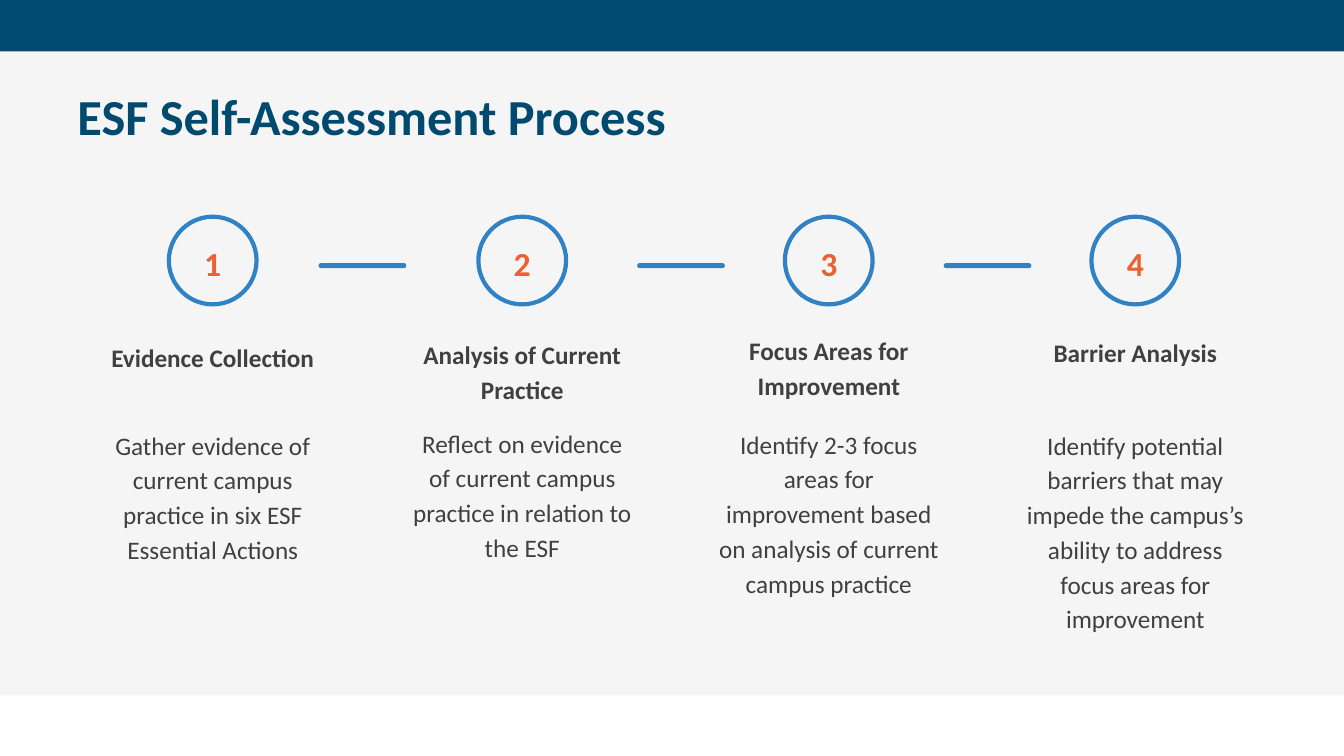
import pptx
import pptx.util
import pptx.dml.color
import pptx.enum.shapes
import pptx.enum.text
from dataclasses import dataclass
from pptx.util import Inches

SHAPES = pptx.enum.shapes.MSO_SHAPE
ANCHOR = pptx.enum.text.MSO_ANCHOR
ALIGN = pptx.enum.text.PP_ALIGN


@dataclass(frozen=True)
class Theme:
    font: str = "Calibri"
    navy: str = "00496F"
    blue: str = "3082C5"
    orange: str = "EC6133"
    ink: str = "404040"
    panel: str = "F5F5F5"
    title_size: int = 36
    number_size: int = 24
    text_size: int = 18


THEME = Theme()
SLIDE_WIDTH = 13.33
CIRCLE_SIZE = 0.87
NUMBER_WIDTH = 0.64
COLUMN_WIDTH = 2.49

# Column centre, heading top, body top, heading, body
STEPS = [
    (2.11, 3.18, 4.09, "Evidence Collection",
     "Gather evidence of current campus practice in six ESF Essential Actions"),
    (5.18, 3.49, 4.07, "Analysis of Current Practice",
     "Reflect on evidence of current campus practice in relation to the ESF"),
    (8.22, 3.45, 4.08, "Focus Areas for Improvement",
     "Identify 2-3 focus areas for improvement based on analysis of current campus practice"),
    (11.26, 3.13, 4.09, "Barrier Analysis",
     "Identify potential barriers that may impede the campus’s ability to address "
     "focus areas for improvement"),
]
DASH_LEFTS = [3.16, 6.32, 9.36]


def rgb(color):
    return pptx.dml.color.RGBColor.from_string(color)


def add_filled(page, kind, left, top, width, height, color):
    shape = page.shapes.add_shape(
        kind, Inches(left), Inches(top), Inches(width), Inches(height))
    shape.shadow.inherit = False
    shape.fill.solid()
    shape.fill.fore_color.rgb = rgb(color)
    shape.line.fill.background()
    return shape


def add_circle(page, center, top):
    circle = page.shapes.add_shape(
        SHAPES.OVAL, Inches(center - CIRCLE_SIZE / 2), Inches(top),
        Inches(CIRCLE_SIZE), Inches(CIRCLE_SIZE))
    circle.shadow.inherit = False
    circle.fill.background()
    circle.line.color.rgb = rgb(THEME.blue)
    circle.line.width = pptx.util.Pt(3)


def add_text(page, left, top, width, height, text, size, color, bold=False,
             anchor=ANCHOR.TOP, align=ALIGN.CENTER, inset=0.13, spacing=1.15):
    box = page.shapes.add_textbox(
        Inches(left), Inches(top), Inches(width), Inches(height))
    frame = box.text_frame
    frame.word_wrap = True
    frame.vertical_anchor = anchor
    frame.margin_left = frame.margin_right = Inches(inset)
    frame.margin_top = frame.margin_bottom = Inches(inset)
    para = frame.paragraphs[0]
    para.alignment = align
    para.line_spacing = spacing
    span = para.add_run()
    span.text = text
    span.font.name = THEME.font
    span.font.size = pptx.util.Pt(size)
    span.font.bold = bold
    span.font.color.rgb = rgb(color)


def add_step(page, number, center, heading_top, body_top, heading, body):
    left = center - COLUMN_WIDTH / 2
    add_circle(page, center, 2.15)
    add_text(page, center - NUMBER_WIDTH / 2, 2.35, NUMBER_WIDTH, 0.47,
             str(number), THEME.number_size, THEME.orange, bold=True, inset=0)
    add_text(page, left, heading_top, COLUMN_WIDTH, 0.65, heading,
             THEME.text_size, THEME.ink, bold=True, anchor=ANCHOR.BOTTOM)
    add_text(page, left, body_top, COLUMN_WIDTH, 1.08, body,
             THEME.text_size, THEME.ink)


def main():
    deck = pptx.Presentation()
    deck.slide_width = Inches(SLIDE_WIDTH)
    deck.slide_height = Inches(7.5)
    page = deck.slides.add_slide(deck.slide_layouts[6])

    # Background panel and top band
    add_filled(page, SHAPES.RECTANGLE, 0, 0.51, SLIDE_WIDTH, 6.39, THEME.panel)
    add_filled(page, SHAPES.RECTANGLE, 0, -0.01, SLIDE_WIDTH, 0.52, THEME.navy)

    # Title
    add_text(page, 0.67, 0.58, 12, 1.12, "ESF Self-Assessment Process",
             THEME.title_size, THEME.navy, bold=True, anchor=ANCHOR.MIDDLE,
             align=ALIGN.LEFT, inset=0.1, spacing=1.0)

    # Numbered steps
    for number, step in enumerate(STEPS, start=1):
        add_step(page, number, *step)

    # Rounded dashes between the steps
    for left in DASH_LEFTS:
        dash = add_filled(page, SHAPES.ROUNDED_RECTANGLE,
                          left, 2.61, 0.87, 0.05, THEME.blue)
        dash.adjustments[0] = 0.5

    deck.save("out.pptx")


if __name__ == "__main__":
    main()
